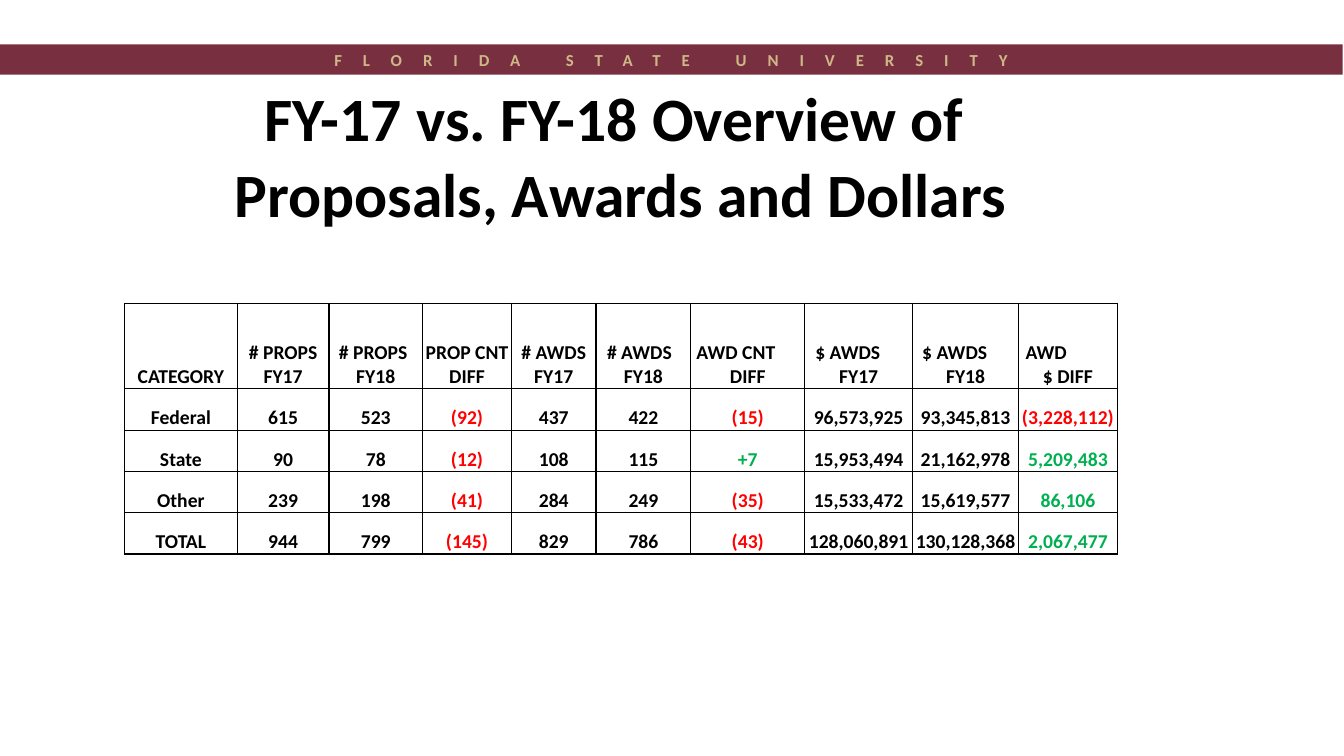
import dataclasses
import typing

import lxml.etree
import pptx
import pptx.dml.color
import pptx.enum.shapes
import pptx.enum.text
import pptx.oxml.ns
import pptx.util

Cm = pptx.util.Cm
Align = pptx.enum.text.PP_ALIGN
Anchor = pptx.enum.text.MSO_ANCHOR


@dataclasses.dataclass(frozen=True)
class Theme:
    font: str = "Calibri"
    black: str = "000000"
    white: str = "FFFFFF"
    garnet: str = "782F40"
    gold: str = "CEB888"
    loss: str = "FF0000"
    gain: str = "00B050"
    title: float = 44
    cell: float = 14
    band: float = 12
    rule: float = 1


@dataclasses.dataclass(frozen=True)
class Column:
    head: str
    width: float
    inset: float = 0
    diff: bool = False


THEME = Theme()

TITLE = "FY-17 vs. FY-18 Overview of \nProposals, Awards and Dollars"

COLUMNS = [
    Column("CATEGORY", 2.84),
    Column("# PROPS\nFY17", 2.31),
    Column("# PROPS\nFY18", 2.36, 0.13),
    Column("PROP CNT\nDIFF", 2.24, diff=True),
    Column("# AWDS\nFY17", 2.13),
    Column("# AWDS\nFY18", 2.39, 0.2),
    Column("AWD CNT\nDIFF", 2.87, 0.6, True),
    Column("$ AWDS\nFY17", 2.72, 0.55),
    Column("$ AWDS\nFY18", 2.67, 0.55),
    Column("AWD\n$ DIFF", 2.49, 1.1, True),
]

ROWS = [
    ["Federal", "615", "523", "(92)", "437", "422", "(15)",
     "96,573,925", "93,345,813", "(3,228,112)"],
    ["State", "90", "78", "(12)", "108", "115", "+7",
     "15,953,494", "21,162,978", "5,209,483"],
    ["Other", "239", "198", "(41)", "284", "249", "(35)",
     "15,533,472", "15,619,577", "86,106"],
    ["TOTAL", "944", "799", "(145)", "829", "786", "(43)",
     "128,060,891", "130,128,368", "2,067,477"],
]


def paint(fill: typing.Any, color: str) -> None:
    fill.solid()
    fill.fore_color.rgb = pptx.dml.color.RGBColor.from_string(color)


def write(frame: typing.Any, text: str, *, size: float,
          color: str = THEME.black, track: float = 0, inset: float = 0) -> None:
    frame.text = text
    for place, part in enumerate(frame.paragraphs):
        part.alignment = Align.CENTER
        part.line_spacing = 1.0
        if inset:
            right = 0 if place else int(Cm(inset))
            props = part._p.get_or_add_pPr()
            props.set("marL", "0")
            props.set("marR", str(right))
        for run in part.runs:
            run.font.name = THEME.font
            run.font.size = pptx.util.Pt(size)
            run.font.bold = True
            run.font.color.rgb = pptx.dml.color.RGBColor.from_string(color)
            if track:
                run._r.get_or_add_rPr().set("spc", str(int(track * 100)))


def frame_cell(cell: typing.Any, edge: str) -> None:
    props = cell._tc.get_or_add_tcPr()
    for side in ("lnL", "lnR", "lnT", "lnB"):
        line = lxml.etree.SubElement(props, pptx.oxml.ns.qn(f"a:{side}"))
        line.set("w", str(int(pptx.util.Pt(THEME.rule))))
        fill = lxml.etree.SubElement(line, pptx.oxml.ns.qn("a:solidFill"))
        tint = lxml.etree.SubElement(fill, pptx.oxml.ns.qn("a:srgbClr"))
        tint.set("val", THEME.black if side == "lnB" else edge)


def style_cell(cell: typing.Any, edge: str = THEME.black) -> None:
    frame_cell(cell, edge)
    paint(cell.fill, THEME.white)
    cell.vertical_anchor = Anchor.BOTTOM
    cell.margin_left = cell.margin_right = cell.margin_top = Cm(0.02)
    cell.margin_bottom = 0


def pick_color(text: str, column: Column) -> str:
    if not column.diff:
        return THEME.black
    return THEME.loss if text.startswith("(") else THEME.gain


def add_band(slide: typing.Any) -> None:
    band = slide.shapes.add_shape(
        pptx.enum.shapes.MSO_SHAPE.RECTANGLE, 0, Cm(1.12), Cm(33.84), Cm(0.76))
    band.shadow.inherit = False
    paint(band.fill, THEME.garnet)
    band.line.fill.background()
    band.text_frame.vertical_anchor = Anchor.MIDDLE
    write(band.text_frame, "FLORIDA STATE UNIVERSITY",
          size=THEME.band, color=THEME.gold, track=15)


def fill_title(table: typing.Any) -> None:
    last = len(COLUMNS) - 1
    for x in range(len(COLUMNS)):
        style_cell(table.cell(0, x), THEME.white)
    title = table.cell(0, 0)
    title.merge(table.cell(0, last))
    title.vertical_anchor = Anchor.TOP
    write(title.text_frame, TITLE, size=THEME.title)


def add_grid(slide: typing.Any) -> None:
    heights = [5.56, 2.16] + [1.04] * len(ROWS)
    width = sum(column.width for column in COLUMNS)
    table = slide.shapes.add_table(
        len(heights), len(COLUMNS), Cm(3.14), Cm(2.08),
        Cm(width), Cm(sum(heights))).table
    table.first_row = table.horz_banding = False
    for row, height in zip(table.rows, heights):
        row.height = Cm(height)
    fill_title(table)
    for x, column in enumerate(COLUMNS):
        table.columns[x].width = Cm(column.width)
        head = table.cell(1, x)
        style_cell(head)
        write(head.text_frame, column.head, size=THEME.cell, inset=column.inset)
        for y, row in enumerate(ROWS, 2):
            cell = table.cell(y, x)
            style_cell(cell)
            write(cell.text_frame, row[x], size=THEME.cell,
                  color=pick_color(row[x], column))


def main() -> None:
    deck = pptx.Presentation()
    deck.slide_width, deck.slide_height = Cm(33.87), Cm(19.05)
    slide = deck.slides.add_slide(deck.slide_layouts[6])
    add_band(slide)
    add_grid(slide)
    deck.save("out.pptx")


if __name__ == "__main__":
    main()
